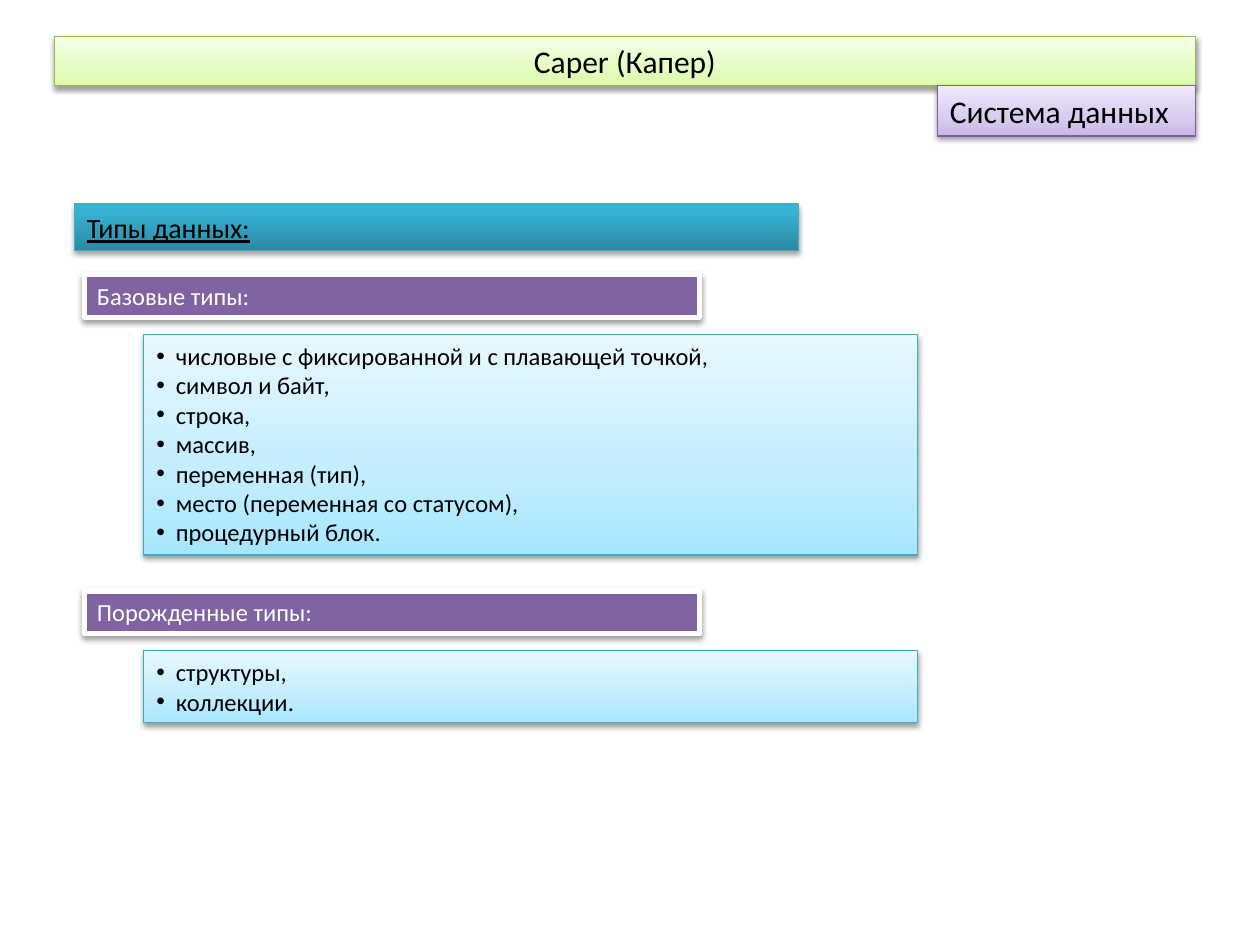
from copy import deepcopy

from lxml.etree import SubElement
from pptx import Presentation
from pptx.dml.color import RGBColor
from pptx.enum.shapes import MSO_SHAPE
from pptx.enum.text import MSO_ANCHOR, MSO_AUTO_SIZE, PP_ALIGN
from pptx.oxml.ns import qn
from pptx.util import Inches, Pt

COLORS = {
    "black": "000000", "white": "FFFFFF", "violet": "8064A2",
    "green_line": "98B955", "violet_line": "7D60A0", "blue_line": "46AAC5",
}
GRADIENTS = {
    "green": ((0, "DAFDA7"), (0.35, "E4FCC2"), (1, "F5FFE7")),
    "lilac": ((0, "C9B5E8"), (0.35, "D8CBEE"), (1, "F0EAF9")),
    "teal": ((0, "2A88A2"), (0.8, "37B1D2"), (1, "34B4D6")),
    "sky": ((0, "A7E6FF"), (0.35, "C1EDFF"), (1, "E7F8FF")),
}
TITLE = "Caper (Капер)"
TOPIC = "Система данных"
HEADING = "Типы данных:"
GROUPS = [
    ("Базовые типы:", 2.18, 1.75, [
        "числовые с фиксированной и с плавающей точкой,",
        "символ и байт,",
        "строка,",
        "массив,",
        "переменная (тип),",
        "место (переменная со статусом),",
        "процедурный блок.",
    ]),
    ("Порожденные типы:", 4.69, 0.57, ["структуры,", "коллекции."]),
]
LIST_OFFSET = 0.475


def rgb(name):
    return RGBColor.from_string(COLORS[name])


def add_shadow(sp, dist, alpha):
    sp.shadow.inherit = False
    effects = sp._element.spPr.find(qn("a:effectLst"))
    shadow = SubElement(effects, qn("a:outerShdw"), blurRad=str(Pt(3.1)),
                        dist=str(Pt(dist)), dir="5400000", rotWithShape="0")
    color = SubElement(shadow, qn("a:srgbClr"), val=COLORS["black"])
    SubElement(color, qn("a:alpha"), val=str(alpha * 1000))


def style_box(sp, box, fill, line, width=0.75, dist=1.6, alpha=38):
    sp.left, sp.top, sp.width, sp.height = (Inches(v) for v in box)
    if fill in GRADIENTS:
        sp.fill.gradient()
        sp.fill.gradient_angle = 90
        stops = sp._element.spPr.find(".//" + qn("a:gsLst"))
        stops.append(deepcopy(stops[0]))
        for stop, (pos, color) in zip(sp.fill.gradient_stops, GRADIENTS[fill]):
            stop.position = pos
            stop.color.rgb = RGBColor.from_string(color)
    else:
        sp.fill.solid()
        sp.fill.fore_color.rgb = rgb(fill)
    sp.line.color.rgb = rgb(line)
    sp.line.width = Pt(width)
    add_shadow(sp, dist, alpha)


def write_text(sp, lines, size=14, color="black", align=PP_ALIGN.LEFT,
               anchor=MSO_ANCHOR.TOP, underline=None, indent=None):
    tf = sp.text_frame
    tf.word_wrap = True
    tf.auto_size = MSO_AUTO_SIZE.NONE
    tf.vertical_anchor = anchor
    for i, text in enumerate(lines):
        p = tf.add_paragraph() if i else tf.paragraphs[0]
        p.alignment = align
        p.space_before = Pt(0)
        if indent:
            pPr = p._p.get_or_add_pPr()
            pPr.set("marL", str(Inches(indent)))
            pPr.set("indent", str(-Inches(indent)))
        r = p.add_run()
        r.text = text
        r.font.name = "Calibri"
        r.font.size = Pt(size)
        r.font.underline = underline
        r.font.color.rgb = rgb(color)


def main():
    """Build the slide on the data types of the Caper language."""
    prs = Presentation()
    prs.slide_width, prs.slide_height = Inches(10), Inches(7.5)
    s = prs.slides.add_slide(prs.slide_layouts[3])

    def add_box(box, *args, **kwargs):
        sp = s.shapes.add_shape(MSO_SHAPE.RECTANGLE, *(Inches(v) for v in box))
        style_box(sp, box, *args, **kwargs)
        return sp

    title = s.shapes.title
    style_box(title, (0.43, 0.29, 9.06, 0.39), "green", "green_line")
    write_text(title, [TITLE], size=18, align=PP_ALIGN.CENTER, anchor=MSO_ANCHOR.MIDDLE)

    topic = add_box((7.44, 0.68, 2.05, 0.4), "lilac", "violet_line")
    write_text(topic, [TOPIC], size=18)

    heading = add_box((0.59, 1.62, 5.75, 0.37), "teal", "blue_line", dist=1.8, alpha=35)
    write_text(heading, [HEADING], size=16, underline=True)

    for idx, (name, top, height, items) in enumerate(GROUPS, 1):
        label = add_box((0.67, top, 4.88, 0.34), "violet", "white", width=3)
        write_text(label, [name], color="white")
        body = s.placeholders[idx]
        style_box(body, (1.14, top + LIST_OFFSET, 6.14, height), "sky", "blue_line")
        write_text(body, items, indent=0.155)

    prs.save("out.pptx")


if __name__ == "__main__":
    main()
